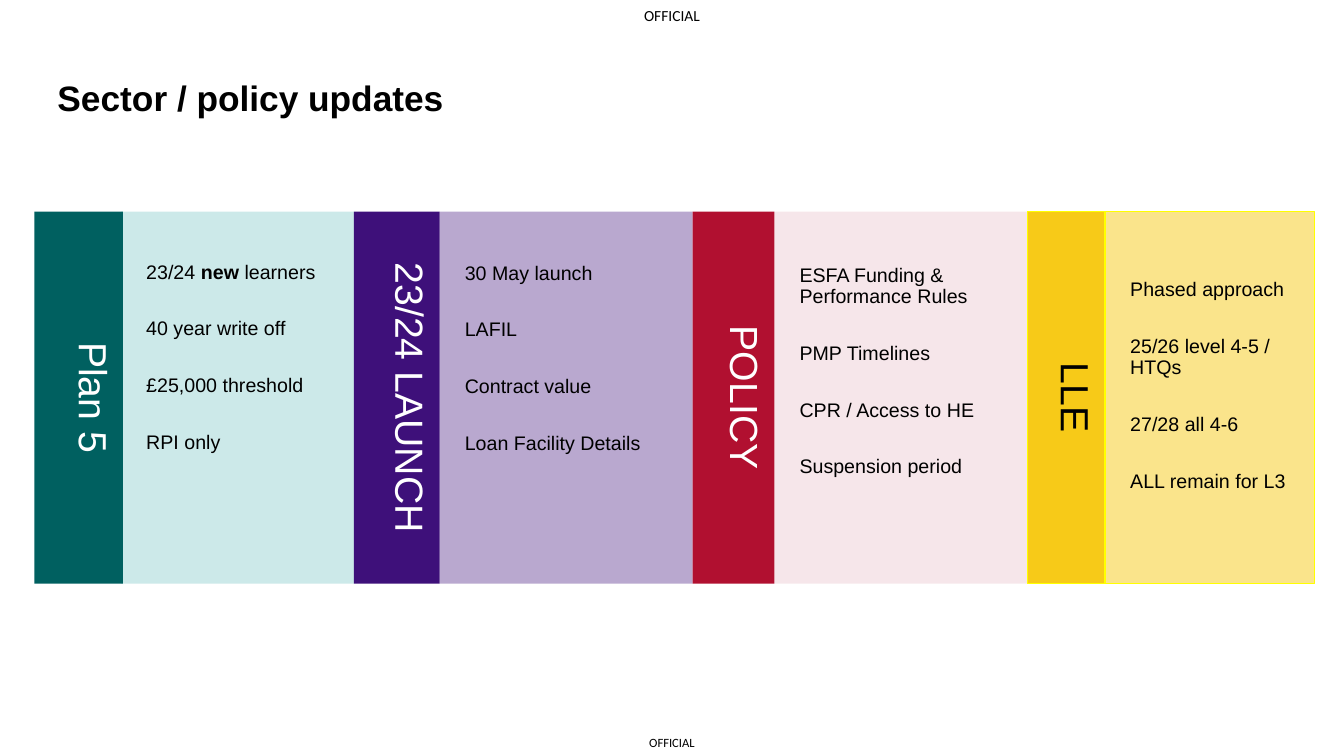
from dataclasses import dataclass

import pptx
import pptx.dml.color
import pptx.enum.shapes
import pptx.enum.text
import pptx.oxml
import pptx.oxml.ns
import pptx.util

ANCHOR = pptx.enum.text.MSO_ANCHOR
ALIGN = pptx.enum.text.PP_ALIGN


@dataclass(frozen=True)
class Theme:
    font: str = "Arial"
    marking_font: str = "Calibri"
    black: str = "000000"
    white: str = "FFFFFF"
    outline: str = "FFFF00"
    title_size: float = 25.2
    tab_size: int = 28
    list_size: int = 14
    header_size: int = 11
    footer_size: int = 9
    item_gap: float = 25.5


@dataclass(frozen=True)
class Panel:
    heading: str
    items: tuple
    width: int
    tab_width: int
    list_top: int
    tab_color: str
    body_color: str
    body_opacity: int = 100
    heading_color: str = "FFFFFF"
    outlined: bool = False
    tab_overlap: int = 0


THEME = Theme()
SLIDE_WIDTH, SLIDE_HEIGHT = 1333, 750
PANELS_LEFT, PANELS_TOP, PANELS_HEIGHT = 34, 210, 369

# Each item is a sequence of (text, bold) runs.
PANELS = [
    Panel("Plan 5",
          ((("23/24 ", False), ("new", True), (" learners", False)),
           (("40 year write off", False),),
           (("£25,000 threshold", False),),
           (("RPI only", False),)),
          317, 88, 50, "006060", "CCE9E9", tab_overlap=2),
    Panel("23/24 LAUNCH",
          ((("30 May launch", False),),
           (("LAFIL", False),),
           (("Contract value", False),),
           (("Loan Facility Details", False),)),
          336, 85, 51, "3E107A", "B29FCA", 90),
    Panel("POLICY",
          ((("ESFA Funding & Performance Rules", False),),
           (("PMP Timelines", False),),
           (("CPR / Access to HE", False),),
           (("Suspension period", False),)),
          332, 81, 53, "B11030", "EFCFD6", 50),
    Panel("LLE",
          ((("Phased approach", False),),
           (("25/26 level 4-5 / HTQs", False),),
           (("27/28 all 4-6", False),),
           (("ALL remain for L3", False),)),
          285, 77, 67, "F7CA18", "F7CA18", 50, THEME.black, True),
]


def px(length):
    return pptx.util.Emu(length * 9144)


def rgb(color):
    return pptx.dml.color.RGBColor.from_string(color)


def set_opacity(fill, percent):
    color = fill._xPr.find(".//" + pptx.oxml.ns.qn("a:srgbClr"))
    alpha = pptx.oxml.parse_xml(
        f'<a:alpha {pptx.oxml.ns.nsdecls("a")} val="{percent * 1000}"/>')
    color.append(alpha)


def add_run(paragraph, text, size, color, bold=False, font=THEME.font):
    run = paragraph.add_run()
    run.text = text
    run.font.name = font
    run.font.size = pptx.util.Pt(size)
    run.font.bold = bold
    run.font.color.rgb = rgb(color)


def set_frame(frame, anchor, insets):
    """Insets run left, top, right, bottom."""
    frame.word_wrap = True
    frame.auto_size = pptx.enum.text.MSO_AUTO_SIZE.NONE
    frame.vertical_anchor = anchor
    (frame.margin_left, frame.margin_top,
     frame.margin_right, frame.margin_bottom) = map(px, insets)


def add_block(slide, box, color, opacity, outlined):
    block = slide.shapes.add_shape(
        pptx.enum.shapes.MSO_SHAPE.RECTANGLE, *map(px, box))
    block.shadow.inherit = False
    block.fill.solid()
    block.fill.fore_color.rgb = rgb(color)
    if opacity < 100:
        set_opacity(block.fill, opacity)
    if outlined:
        block.line.color.rgb = rgb(THEME.outline)
        block.line.width = pptx.util.Pt(1)
    else:
        block.line.fill.background()
    return block


def add_panel(slide, panel, box):
    """A colored list with a vertical heading tab on its left."""
    left, top, width, height = box
    body_offset = panel.tab_width - panel.tab_overlap
    body = add_block(slide, (left + body_offset, top, width - body_offset, height),
                     panel.body_color, panel.body_opacity, panel.outlined)
    set_frame(body.text_frame, ANCHOR.TOP, (25, panel.list_top, 11, 11))
    for index, item in enumerate(panel.items):
        paragraph = (body.text_frame.add_paragraph() if index
                     else body.text_frame.paragraphs[0])
        paragraph.alignment = ALIGN.LEFT
        paragraph.line_spacing = 0.9
        paragraph.space_before = pptx.util.Pt(THEME.item_gap if index else 0)
        for text, bold in item:
            add_run(paragraph, text, THEME.list_size, THEME.black, bold)

    tab = add_block(slide, (left, top, panel.tab_width, height),
                    panel.tab_color, 100, panel.outlined)
    set_frame(tab.text_frame, ANCHOR.TOP, (10, 5, 10, 5))
    tab.text_frame._txBody.bodyPr.set("vert", "vert")
    heading = tab.text_frame.paragraphs[0]
    heading.alignment = ALIGN.CENTER
    add_run(heading, panel.heading, THEME.tab_size, panel.heading_color)


def add_title(slide, box):
    title = slide.shapes.title
    title.left, title.top, title.width, title.height = map(px, box)
    set_frame(title.text_frame, ANCHOR.BOTTOM, (10, 5, 10, 5))
    paragraph = title.text_frame.paragraphs[0]
    paragraph.alignment = ALIGN.LEFT
    paragraph.line_spacing = 0.9
    add_run(paragraph, "Sector / policy updates", THEME.title_size,
            THEME.black, True)


def add_marking(slide, box, size):
    marking = slide.shapes.add_textbox(*map(px, box))
    set_frame(marking.text_frame, ANCHOR.MIDDLE, (0, 0, 0, 0))
    paragraph = marking.text_frame.paragraphs[0]
    paragraph.alignment = ALIGN.CENTER
    add_run(paragraph, "OFFICIAL", size, THEME.black, font=THEME.marking_font)


def main():
    deck = pptx.Presentation()
    deck.slide_width, deck.slide_height = px(SLIDE_WIDTH), px(SLIDE_HEIGHT)
    slide = deck.slides.add_slide(deck.slide_layouts.get_by_name("Title Only"))
    add_marking(slide, (623, 0, 87, 31), THEME.header_size)
    add_marking(slide, (630, 723, 73, 27), THEME.footer_size)
    add_title(slide, (47, 48, 430, 75))
    left = PANELS_LEFT
    for panel in PANELS:
        add_panel(slide, panel, (left, PANELS_TOP, panel.width, PANELS_HEIGHT))
        left += panel.width
    deck.save("out.pptx")


if __name__ == "__main__":
    main()
